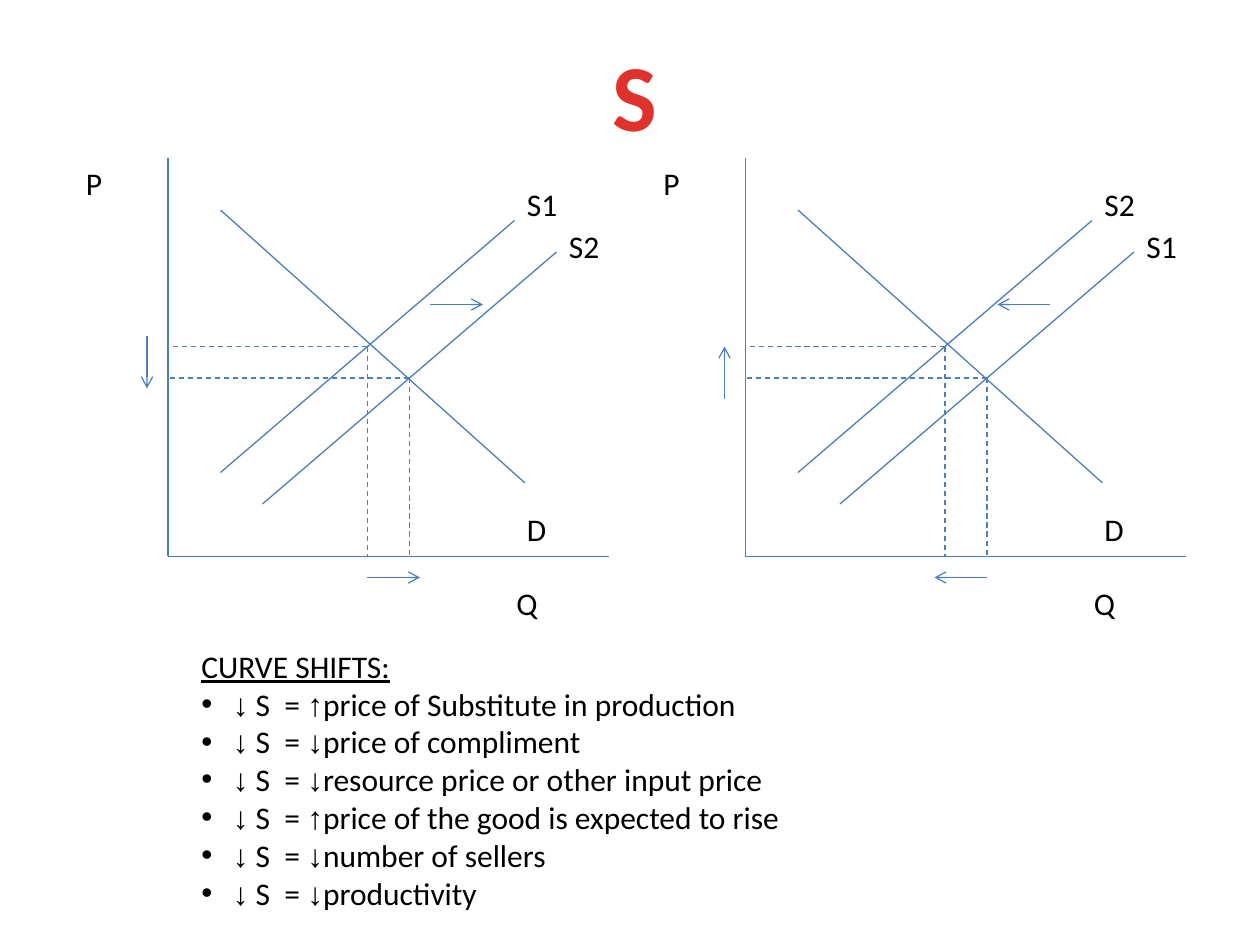
from dataclasses import dataclass

from lxml.etree import SubElement
from pptx import Presentation
from pptx.dml.color import RGBColor
from pptx.enum.dml import MSO_LINE_DASH_STYLE as Dash
from pptx.enum.shapes import MSO_CONNECTOR as Connector
from pptx.enum.text import MSO_ANCHOR as Anchor, PP_ALIGN as Align
from pptx.oxml.ns import qn
from pptx.util import Inches, Pt


@dataclass(frozen=True)
class Theme:
    font: str = "Calibri"
    arrow_font: str = "Arial"
    title_size: int = 54
    body_size: int = 18
    line_width: float = 0.75
    line: RGBColor = RGBColor(0x4B, 0x7E, 0xBC)
    text: RGBColor = RGBColor(0, 0, 0)
    title_light: RGBColor = RGBColor(0xE0, 0x32, 0x2D)
    title_dark: RGBColor = RGBColor(0xA2, 0x20, 0x1C)


THEME = Theme()
CELLS_PER_INCH = 12
GRAPH_TOP, AXIS_LEFT, AXIS_BOTTOM = 15, 16, 53
GRAPH_STEP = 55
LABEL_WIDTHS = {"P": 0.33, "Q": 0.37, "D": 0.36, "S1": 0.45, "S2": 0.45}

CAUSES = [
    ("↑", "price of Substitute in production"),
    ("↓", "price of compliment"),
    ("↓", "resource price or other input price"),
    ("↑", "price of the good is expected to rise"),
    ("↓", "number of sellers"),
    ("↓", "productivity"),
]


def grid(cells):
    return Inches(cells / CELLS_PER_INCH)


def style_font(font, name=THEME.font):
    font.name = name
    font.size = Pt(THEME.body_size)
    font.color.rgb = THEME.text


def add_title(slide, text):
    title = slide.shapes.title
    title.left, title.top = Inches(4.75), Inches(0.24)
    title.width, title.height = Inches(0.57), Inches(1.01)
    frame = title.text_frame
    frame.text = text
    frame.word_wrap = False
    frame.vertical_anchor = Anchor.TOP
    frame.paragraphs[0].alignment = Align.CENTER
    font = frame.paragraphs[0].runs[0].font
    font.name, font.size, font.bold = THEME.font, Pt(THEME.title_size), True
    font.fill.gradient()
    font.fill.gradient_angle = 270
    shades = ((0.25, THEME.title_light), (1, THEME.title_dark))
    for stop, (position, color) in zip(font.fill.gradient_stops, shades):
        stop.position = position
        stop.color.rgb = color


def add_label(slide, text, column, row):
    label = slide.shapes.add_textbox(
        grid(column), grid(row), Inches(LABEL_WIDTHS[text]), Inches(0.4))
    label.text_frame.text = text
    label.text_frame.word_wrap = False
    style_font(label.text_frame.paragraphs[0].runs[0].font)


def add_line(slide, start, end, dashed=False, arrow=False):
    points = [grid(cells) for cells in (*start, *end)]
    line = slide.shapes.add_connector(Connector.STRAIGHT, *points)
    line.line.color.rgb = THEME.line
    line.line.width = Pt(THEME.line_width)
    if dashed:
        line.line.dash_style = Dash.DASH
    properties = line._element.spPr
    if arrow:
        SubElement(properties.find(qn("a:ln")), qn("a:tailEnd"), type="arrow")
    SubElement(properties, qn("a:effectLst"))


def add_graph(slide, offset, upper_supply, lower_supply, shift_arrows):
    left = AXIS_LEFT + offset

    def line(start, end, **style):
        add_line(slide, (start[0] + offset, start[1]),
                 (end[0] + offset, end[1]), **style)

    origin = (AXIS_LEFT, AXIS_BOTTOM)
    line((AXIS_LEFT, GRAPH_TOP), origin)
    line(origin, (AXIS_LEFT + 42, AXIS_BOTTOM))
    line((21, 20), (50, 46))
    line((21, 45), (49, 21))
    line((25, 48), (53, 24))

    for quantity, price in ((35, 33), (39, 36)):
        line((quantity, price), (AXIS_LEFT, price), dashed=True)
        line((quantity, price), (quantity, AXIS_BOTTOM), dashed=True)

    for start, end in shift_arrows:
        line(start, end, arrow=True)

    add_label(slide, "P", left - 9, GRAPH_TOP)
    add_label(slide, "Q", left + 32, AXIS_BOTTOM + 2)
    add_label(slide, "D", left + 33, 48)
    add_label(slide, upper_supply, left + 33, 17)
    add_label(slide, lower_supply, left + 37, 21)


def add_cause(frame, direction, cause):
    paragraph = frame.add_paragraph()
    properties = paragraph._p.get_or_add_pPr()
    properties.set("marL", str(Inches(0.25)))
    properties.set("indent", str(-Inches(0.25)))
    SubElement(properties, qn("a:buFont"), typeface=THEME.arrow_font)
    SubElement(properties, qn("a:buChar"), char="•")
    for text in ("↓", " S  = ", direction, cause):
        run = paragraph.add_run()
        run.text = text
        style_font(run.font, THEME.arrow_font if text in "↑↓" else THEME.font)


def add_curve_shifts(slide):
    box = slide.shapes.add_textbox(grid(18), grid(61), Inches(4.84), Inches(2.22))
    frame = box.text_frame
    frame.text = "CURVE SHIFTS:"
    frame.word_wrap = False
    heading = frame.paragraphs[0].runs[0].font
    style_font(heading)
    heading.underline = True
    for direction, cause in CAUSES:
        add_cause(frame, direction, cause)


def main():
    deck = Presentation()
    deck.slide_width, deck.slide_height = Inches(10), Inches(7.5)
    slide = deck.slides.add_slide(deck.slide_layouts[5])
    add_title(slide, "S")
    increase = [((14, 32), (14, 37)), ((35, 55), (40, 55)), ((41, 29), (46, 29))]
    decrease = [((14, 38), (14, 33)), ((39, 55), (34, 55)), ((45, 29), (40, 29))]
    add_graph(slide, 0, "S1", "S2", increase)
    add_graph(slide, GRAPH_STEP, "S2", "S1", decrease)
    add_curve_shifts(slide)
    deck.save("out.pptx")


if __name__ == "__main__":
    main()
